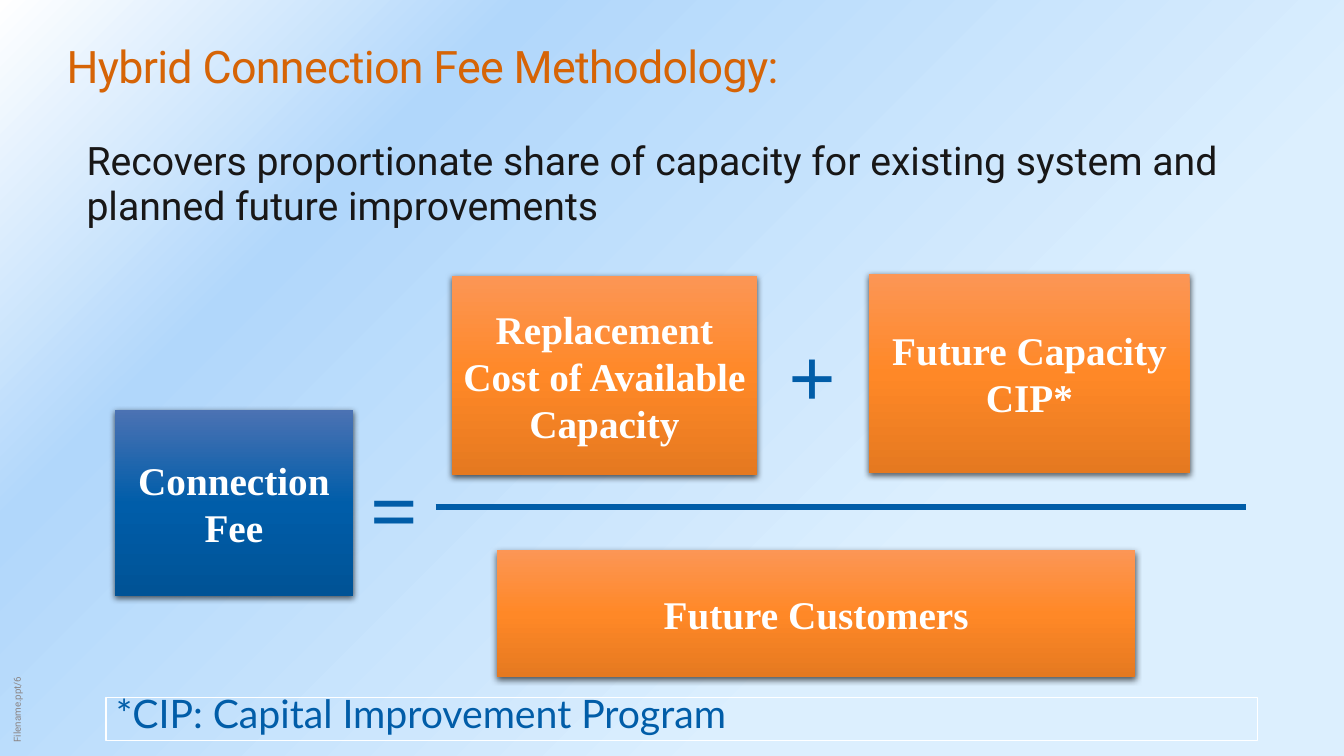
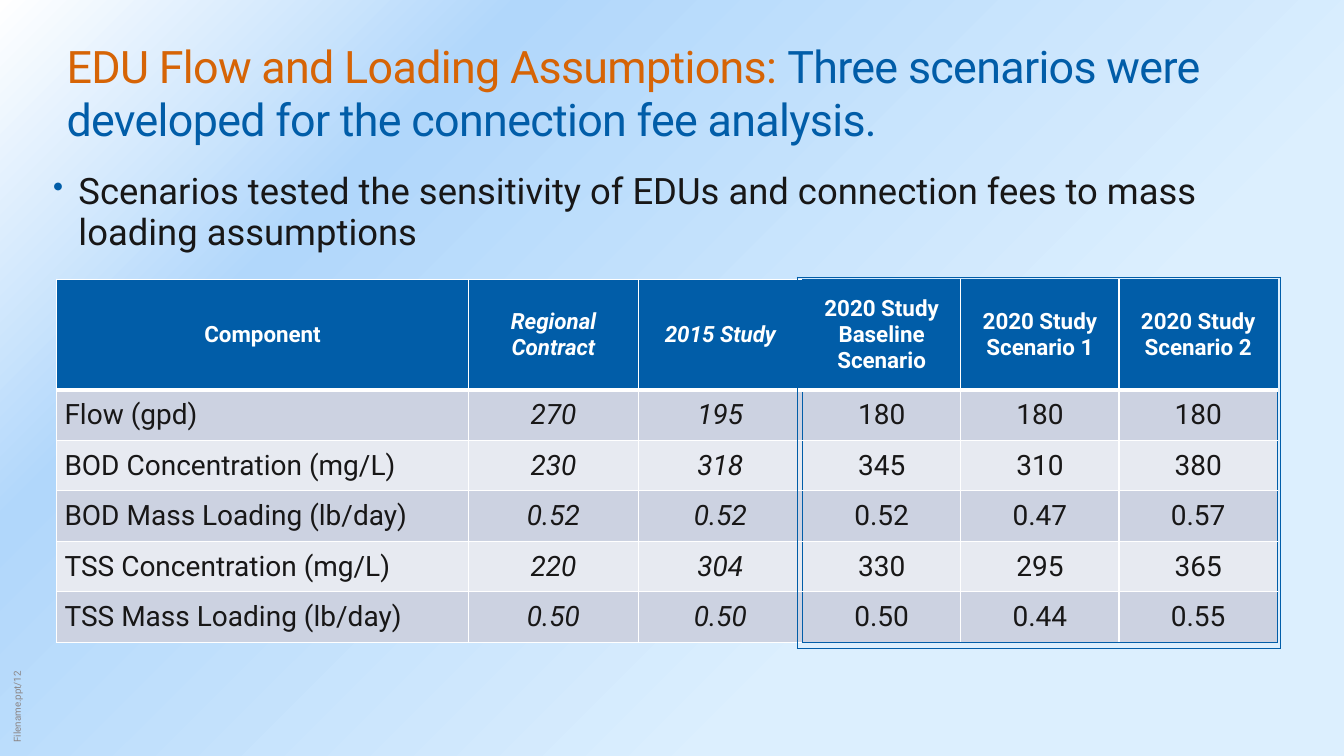
import pptx
import pptx.dml.color
import pptx.enum.shapes
import pptx.enum.text
import pptx.oxml
import pptx.oxml.ns
import pptx.util

Inches = pptx.util.Inches
Pt = pptx.util.Pt
RGBColor = pptx.dml.color.RGBColor
ALIGN = pptx.enum.text.PP_ALIGN
ANCHOR = pptx.enum.text.MSO_ANCHOR
qn = pptx.oxml.ns.qn

BLUE = RGBColor(0x01, 0x5D, 0xA8)
ORANGE = RGBColor(0xD6, 0x64, 0x06)
INK = RGBColor(0x18, 0x17, 0x17)
GREY = RGBColor(0x8B, 0x85, 0x85)
WHITE = RGBColor(0xFF, 0xFF, 0xFF)
BANDS = [RGBColor(0xCC, 0xD2, 0xE1), RGBColor(0xE7, 0xEA, 0xF1)]
BACKGROUND_STOPS = [
    (30, RGBColor(0xDC, 0xEF, 0xFE)),
    (75, RGBColor(0xB1, 0xD7, 0xFB)),
    (100, WHITE),
]
ORANGE_STOPS = [
    (0, RGBColor(0xFC, 0x96, 0x55)),
    (50, RGBColor(0xFF, 0x88, 0x27)),
    (100, RGBColor(0xE5, 0x79, 0x20)),
]
BLUE_STOPS = [
    (0, RGBColor(0x4B, 0x72, 0xB3)),
    (50, RGBColor(0x00, 0x5D, 0xA9)),
    (100, RGBColor(0x00, 0x53, 0x96)),
]

NAMESPACE = pptx.oxml.ns.nsdecls("a")
SHADOW = (
    f'<a:outerShdw {NAMESPACE} blurRad="57150" dist="19050" dir="5400000" '
    'algn="ctr" rotWithShape="0"><a:srgbClr val="000000">'
    '<a:alpha val="63000"/></a:srgbClr></a:outerShdw>'
)
DOWNWARD = f'<a:lin {NAMESPACE} ang="5400000" scaled="0"/>'
FROM_CORNER = (
    f'<a:path {NAMESPACE} path="circle">'
    '<a:fillToRect l="100000" t="100000"/></a:path>'
)


def write_text(frame, text, size=28, color=INK, font="Roboto", bold=False,
               italic=False, align=ALIGN.LEFT, anchor=ANCHOR.TOP,
               line_spacing=None, before=0, after=0, tracking=0):
    """Append a formatted run to the frame's first paragraph."""
    frame.word_wrap = True
    frame.auto_size = pptx.enum.text.MSO_AUTO_SIZE.NONE
    frame.vertical_anchor = anchor
    paragraph = frame.paragraphs[0]
    paragraph.alignment = align
    paragraph.line_spacing = line_spacing
    paragraph.space_before = Pt(before)
    paragraph.space_after = Pt(after)
    run = paragraph.add_run()
    run.text = text
    run.font.size = Pt(size)
    run.font.name = font
    run.font.bold = bold
    run.font.italic = italic
    run.font.color.rgb = color
    if tracking:
        run.font._element.set("spc", str(round(tracking * 100)))
    return paragraph


def set_gradient(fill, element, stops, direction):
    fill.gradient()
    gradient = next(element.iter(qn("a:gradFill")))
    for child in list(gradient):
        gradient.remove(child)
    stop_xml = "".join(
        f'<a:gs pos="{position * 1000}"><a:srgbClr val="{color}"/></a:gs>'
        for position, color in stops
    )
    gradient.append(pptx.oxml.parse_xml(f"<a:gsLst {NAMESPACE}>{stop_xml}</a:gsLst>"))
    gradient.append(pptx.oxml.parse_xml(direction))


presentation = pptx.Presentation()
presentation.slide_width = Inches(13.33)
presentation.slide_height = Inches(7.5)

# Shared background, title and page mark
layout = presentation.slide_layouts[5]
set_gradient(layout.background.fill, layout._element, BACKGROUND_STOPS, FROM_CORNER)

slides = []
for page, title_runs in [
    (6, [("Hybrid Connection Fee Methodology:", ORANGE)]),
    (12, [("EDU Flow and Loading Assumptions: ", ORANGE),
          ("Three scenarios were developed for the connection fee analysis.", BLUE)]),
]:
    slide = presentation.slides.add_slide(layout)
    slides.append(slide)
    title = slide.shapes.title
    title.left, title.top = Inches(0.56), Inches(0.33)
    title.width, title.height = Inches(12.22), Inches(1.17)
    for text, color in title_runs:
        write_text(title.text_frame, text, size=32, color=color, tracking=-0.5)

    page_mark = slide.shapes.add_textbox(
        Inches(-1.17), Inches(5.97), Inches(2.67), Inches(0.22))
    page_mark.rotation = 270
    mark_frame = page_mark.text_frame
    mark_frame.margin_left = mark_frame.margin_right = Inches(0.05)
    write_text(mark_frame, f"Filename.ppt/{page}", size=7, color=GREY,
               anchor=ANCHOR.BOTTOM)

formula_slide, scenario_slide = slides

# Connection fee formula
summary = formula_slide.shapes.add_textbox(
    Inches(0.56), Inches(1.34), Inches(12.22), Inches(1.1))
paragraph = write_text(
    summary.text_frame,
    "Recovers proportionate share of capacity for existing system and "
    "planned future improvements",
    line_spacing=0.95)
paragraph._p.get_or_add_pPr().set("marL", str(Inches(0.2)))

fraction_bar = formula_slide.shapes.add_connector(
    pptx.enum.shapes.MSO_CONNECTOR.STRAIGHT,
    Inches(4.32), Inches(5.03), Inches(12.36), Inches(5.03))
fraction_bar.line.color.rgb = BLUE
fraction_bar.line.width = Pt(4.5)
fraction_bar._element.spPr.append(
    pptx.oxml.parse_xml(f"<a:effectLst {NAMESPACE}/>"))

for text, stops, box in [
    ("Future Capacity CIP*", ORANGE_STOPS, (8.62, 2.72, 3.18, 1.97)),
    ("Connection Fee", BLUE_STOPS, (1.14, 4.07, 2.36, 1.84)),
    ("Future Customers", ORANGE_STOPS, (4.93, 5.46, 6.33, 1.26)),
    ("Replacement Cost of Available Capacity", ORANGE_STOPS,
     (4.48, 2.74, 3.03, 1.97)),
]:
    shape = formula_slide.shapes.add_shape(
        pptx.enum.shapes.MSO_SHAPE.RECTANGLE, *map(Inches, box))
    set_gradient(shape.fill, shape._element, stops, DOWNWARD)
    shape.line.fill.background()
    shape.shadow.inherit = False
    shape._element.spPr.find(qn("a:effectLst")).append(
        pptx.oxml.parse_xml(SHADOW))
    write_text(shape.text_frame, text, color=WHITE, font="Times New Roman",
               bold=True, align=ALIGN.CENTER, anchor=ANCHOR.MIDDLE, after=10)

for sign, box, align, anchor in [
    ("=", (3.58, 3.72, 0.73, 2.62), ALIGN.LEFT, ANCHOR.MIDDLE),
    ("+", (7.5, 3.16, 1.12, 1.1), ALIGN.CENTER, ANCHOR.TOP),
]:
    operator = formula_slide.shapes.add_textbox(*map(Inches, box))
    write_text(operator.text_frame, sign, size=60, color=BLUE,
               font="Times New Roman", bold=True, align=align, anchor=anchor,
               after=10)

footnote = formula_slide.shapes.add_textbox(
    Inches(1.05), Inches(6.92), Inches(11.42), Inches(0.43))
footnote.line.color.rgb = WHITE
footnote.line.width = Pt(1)
write_text(footnote.text_frame, "*CIP: Capital Improvement Program",
           color=BLUE, font="Lato", anchor=ANCHOR.BOTTOM)

# Scenario table
ROWS = [
    ("Component", "Regional Contract", "2015 Study",
     "2020 Study Baseline Scenario", "2020 Study Scenario 1",
     "2020 Study Scenario 2"),
    ("Flow (gpd)", "270", "195", "180", "180", "180"),
    ("BOD Concentration (mg/L)", "230", "318", "345", "310", "380"),
    ("BOD Mass Loading (lb/day)", "0.52", "0.52", "0.52", "0.47", "0.57"),
    ("TSS Concentration (mg/L)", "220", "304", "330", "295", "365"),
    ("TSS Mass Loading (lb/day)", "0.50", "0.50", "0.50", "0.44", "0.55"),
]
COLUMN_WIDTHS = [4.09, 1.68, 1.63, 1.57, 1.57, 1.57]
LAST_ROW = len(ROWS) - 1
LAST_COLUMN = len(COLUMN_WIDTHS) - 1
FIRST_STUDY_COLUMN = 3

table = scenario_slide.shapes.add_table(
    len(ROWS), len(COLUMN_WIDTHS),
    Inches(0.56), Inches(2.77), Inches(12.1), Inches(3.6)).table
for column, width in zip(table.columns, COLUMN_WIDTHS):
    column.width = Inches(width)

cell_borders = []
for row_index, values in enumerate(ROWS):
    header = row_index == 0
    table.rows[row_index].height = Inches(1.1 if header else 0.5)
    for column_index, value in enumerate(values):
        cell = table.cell(row_index, column_index)
        cell.margin_left = cell.margin_right = Inches(0.08)
        cell.margin_top = cell.margin_bottom = 0
        cell.fill.solid()
        cell.fill.fore_color.rgb = BLUE if header else BANDS[(row_index - 1) % 2]
        label = column_index == 0 and not header
        spacing = 0 if header else 2
        write_text(cell.text_frame, value, size=16 if header else 20,
                   color=WHITE if header else INK, bold=header,
                   italic=column_index in (1, 2),
                   align=ALIGN.LEFT if label else ALIGN.CENTER,
                   before=spacing, after=spacing)
        cell.vertical_anchor = ANCHOR.MIDDLE

        in_study = column_index >= FIRST_STUDY_COLUMN
        study_edges = {
            "L": column_index == FIRST_STUDY_COLUMN,
            "R": column_index in (FIRST_STUDY_COLUMN - 1, LAST_COLUMN),
            "T": in_study and header,
            "B": in_study and row_index == LAST_ROW,
        }
        thick_edge = {0: "B", 1: "T"}.get(row_index)
        cell_borders.append((cell, {
            edge: (BLUE if outlined else WHITE, 3 if edge == thick_edge else 1)
            for edge, outlined in study_edges.items()
        }))

bullet_box = scenario_slide.shapes.add_textbox(
    Inches(0.43), Inches(1.65), Inches(12.34), Inches(0.97))
paragraph = write_text(
    bullet_box.text_frame,
    "Scenarios tested the sensitivity of EDUs and connection fees to mass "
    "loading assumptions",
    size=26, line_spacing=0.95)
properties = paragraph._p.get_or_add_pPr()
properties.set("marL", str(Inches(0.25)))
properties.set("indent", str(Inches(-0.25)))
for bullet_xml in [
    f'<a:buClr {NAMESPACE}><a:srgbClr val="{BLUE}"/></a:buClr>',
    f'<a:buSzPct {NAMESPACE} val="82000"/>',
    f'<a:buChar {NAMESPACE} char="•"/>',
]:
    properties.append(pptx.oxml.parse_xml(bullet_xml))

study_frame = scenario_slide.shapes.add_table(
    1, 1, Inches(7.91), Inches(2.75), Inches(4.79), Inches(3.68)).table
study_frame.first_row = study_frame.horz_banding = False
frame_cell = study_frame.cell(0, 0)
frame_cell.fill.background()
cell_borders.append((frame_cell, dict.fromkeys("LRTB", (BLUE, 1))))

for cell, edges in cell_borders:
    cell_properties = cell._tc.get_or_add_tcPr()
    for position, (edge, (color, width)) in enumerate(edges.items()):
        cell_properties.insert(position, pptx.oxml.parse_xml(
            f'<a:ln{edge} {NAMESPACE} w="{Pt(width)}"><a:solidFill>'
            f'<a:srgbClr val="{color}"/></a:solidFill></a:ln{edge}>'))

presentation.save("out.pptx")
